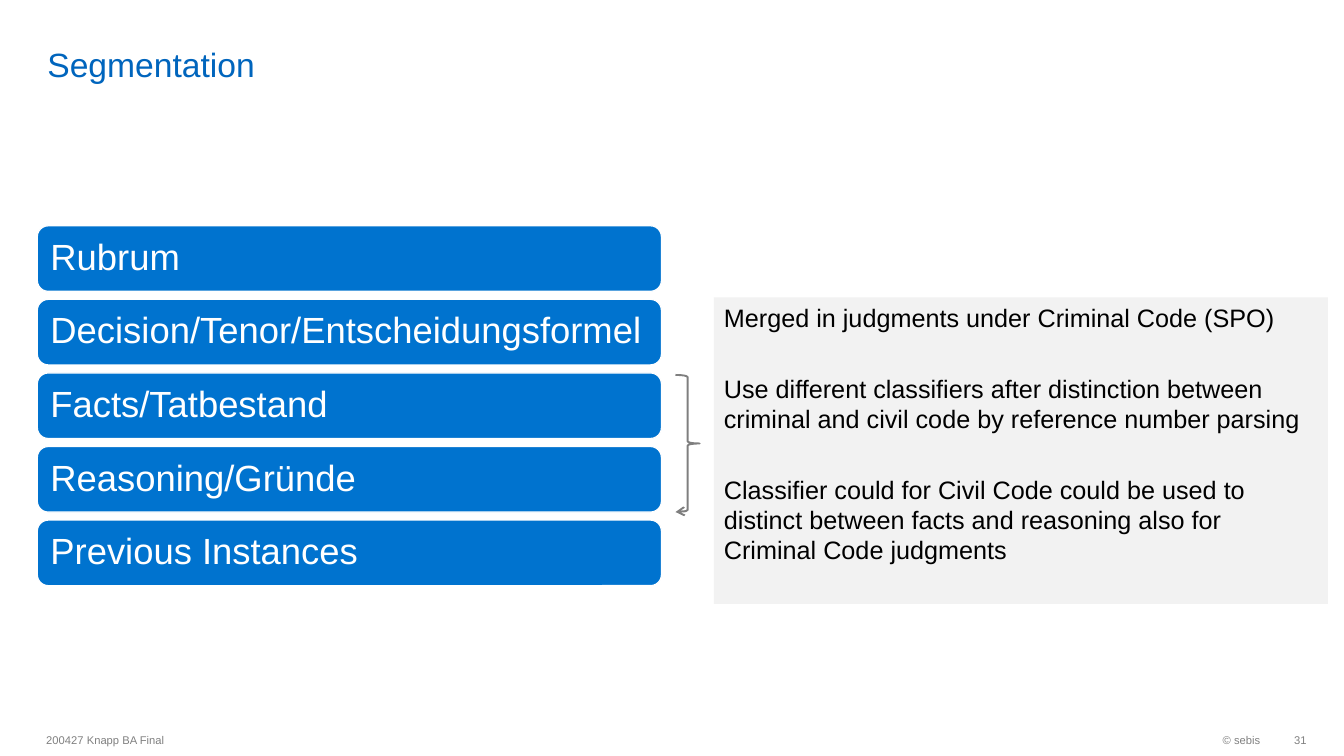
from lxml import etree
from pptx import Presentation
from pptx.dml.color import RGBColor
from pptx.enum.shapes import MSO_SHAPE
from pptx.enum.text import MSO_ANCHOR, MSO_AUTO_SIZE, PP_ALIGN
from pptx.oxml.ns import qn
from pptx.util import Inches, Pt

ROUNDED, BRACE = MSO_SHAPE.ROUNDED_RECTANGLE, MSO_SHAPE.RIGHT_BRACE
TOP, MIDDLE, BOTTOM = MSO_ANCHOR.TOP, MSO_ANCHOR.MIDDLE, MSO_ANCHOR.BOTTOM
LEFT, RIGHT = PP_ALIGN.LEFT, PP_ALIGN.RIGHT
NO_FIT = MSO_AUTO_SIZE.NONE


def place(shape, left, top, width, height):
    shape.left, shape.top = Inches(left), Inches(top)
    shape.width, shape.height = Inches(width), Inches(height)


def write(shape, text, size, color, anchor, align=LEFT, margins=(0.1, 0.05, 0.1, 0.05)):
    frame = shape.text_frame
    frame.text = text
    frame.word_wrap = True
    frame.auto_size = NO_FIT
    frame.vertical_anchor = anchor
    (frame.margin_left, frame.margin_top,
     frame.margin_right, frame.margin_bottom) = map(Inches, margins)
    for para in frame.paragraphs:
        para.alignment = align
        para.space_before = Pt(0)
        for span in para.runs:
            span.font.name = "Arial"
            span.font.size = Pt(size)
            span.font.color.rgb = RGBColor.from_string(color)


deck = Presentation()
deck.slide_width, deck.slide_height = Inches(13.33), Inches(7.5)
page = deck.slides.add_slide(deck.slide_layouts[1])
title, notes = page.placeholders

# Title
place(title, 0.37, 0.05, 11.58, 0.79)
write(title, "Segmentation", 24, "0065BD", BOTTOM, margins=(0.1, 0, 0.1, 0))

# Segments of a judgment
segments = ["Rubrum", "Decision/Tenor/Entscheidungsformel", "Facts/Tatbestand",
            "Reasoning/Gründe", "Previous Instances"]
for row, segment in enumerate(segments):
    bar = page.shapes.add_shape(ROUNDED, Inches(0.37), Inches(2.24 + 0.73 * row),
                                Inches(6.19), Inches(0.65))
    bar.shadow.inherit = False
    bar.fill.solid()
    bar.fill.fore_color.rgb = RGBColor.from_string("0073CF")
    bar.line.color.rgb = RGBColor.from_string("FFFFFF")
    bar.line.width = Pt(0.85)
    write(bar, segment, 26, "FFFFFF", MIDDLE, margins=(0.1, 0.05, 0.05, 0.05))
    bar.text_frame.paragraphs[0].line_spacing = 0.9

# Remarks on the merged segments
remarks = [
    "Merged in judgments under Criminal Code (SPO)",
    "Use different classifiers after distinction between criminal and civil code "
    "by reference number parsing",
    "Classifier could for Civil Code could be used to distinct between facts and "
    "reasoning also for Criminal Code judgments",
]
place(notes, 7.08, 2.95, 6.09, 3.04)
notes.fill.solid()
notes.fill.fore_color.rgb = RGBColor.from_string("F2F2F2")
write(notes, "\n".join(remarks), 18, "000000", TOP)
for number, para in enumerate(notes.text_frame.paragraphs):
    para.line_spacing = 1.0
    para.space_before = Pt(29 if number else 0)
    properties = para._p.get_or_add_pPr()
    properties.set("marL", "0")
    properties.set("indent", "0")
    etree.SubElement(properties, qn("a:buNone"))

# Brace joining facts and reasoning
brace = page.shapes.add_shape(BRACE, Inches(6.7), Inches(3.72), Inches(0.24), Inches(1.36))
brace.shadow.inherit = False
brace.fill.background()
brace.line.color.rgb = RGBColor.from_string("000000")
brace.line.width = Pt(1.35)
outline = brace.line._get_or_add_ln()
black = outline.find(".//" + qn("a:srgbClr"))
etree.SubElement(black, qn("a:alpha"), val="50000")
etree.SubElement(outline, qn("a:tailEnd"), type="arrow")

# Footer
footers = [
    ("200427 Knapp BA Final", 0.36, 6.3, LEFT, 0.1),
    ("© sebis", 10.26, 2.34, RIGHT, 0.1),
    ("31", 12.6, 0.36, RIGHT, 0),
]
for text, left, width, align, right_margin in footers:
    box = page.shapes.add_textbox(Inches(left), Inches(7.18), Inches(width), Inches(0.32))
    write(box, text, 8, "808080", MIDDLE, align, (0.1, 0.05, right_margin, 0.05))

deck.save("out.pptx")
